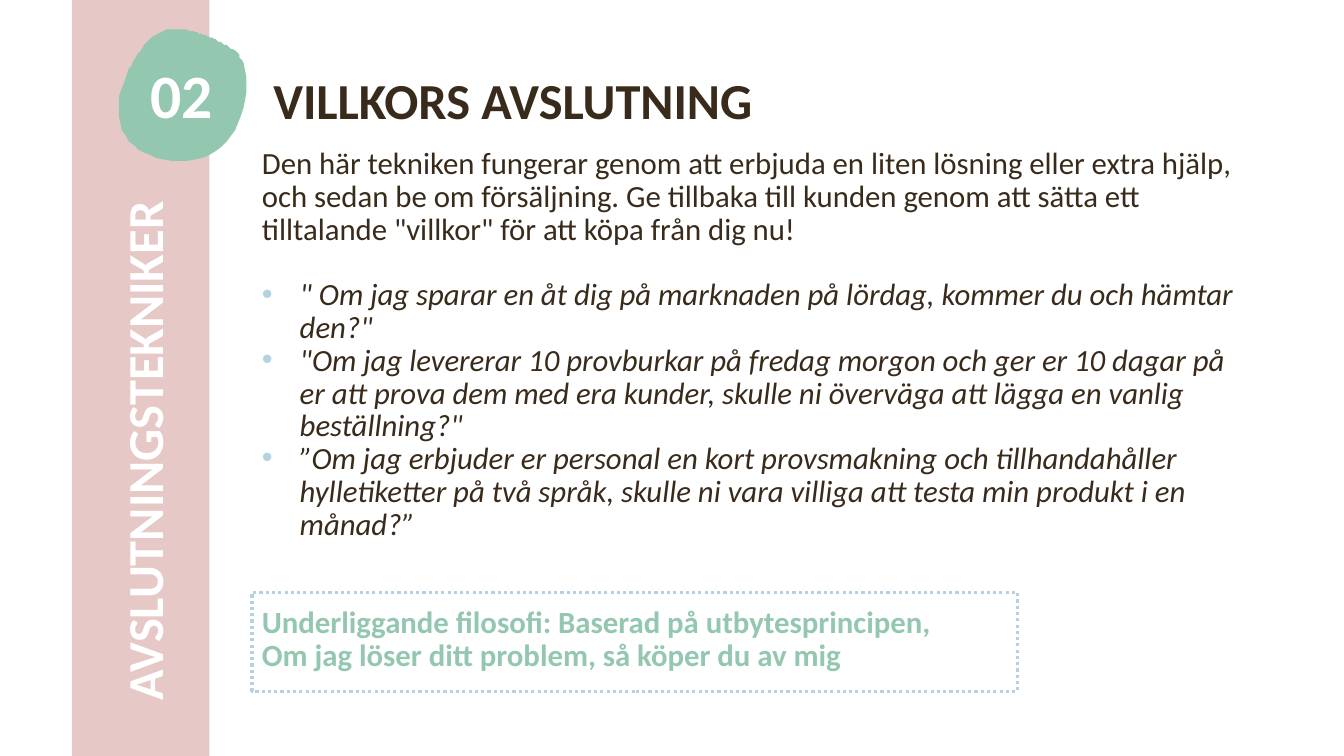
from dataclasses import dataclass
from typing import Any

from lxml import etree
from pptx import Presentation
from pptx import util as u
from pptx.dml.color import RGBColor
from pptx.enum import dml, shapes, text
from pptx.oxml.ns import qn

Pt = u.Pt
BROWN = RGBColor(0x38, 0x2B, 0x1B)
GREEN = RGBColor(0x94, 0xC7, 0xB0)
PINK = RGBColor(0xE6, 0xC8, 0xC7)
BLUE = RGBColor(0xB6, 0xD1, 0xE1)
WHITE = RGBColor(0xFF, 0xFF, 0xFF)
LINE = Pt(23.4)
INDENT = 27


@dataclass
class Para:
    words: str
    size: float = 22
    color: RGBColor = BROWN
    bold: bool = False
    italic: bool = False
    bullet: bool = False
    before: float = 0
    spacing: Any = LINE
    align: Any = text.PP_ALIGN.LEFT


@dataclass
class Box:
    left: float
    top: float
    width: float
    height: float
    paras: tuple[Para, ...]
    rotation: float = 0
    anchor: Any = text.MSO_ANCHOR.TOP


def add_bullet(p: Any) -> None:
    pPr = p._p.get_or_add_pPr()
    pPr.set("marL", str(Pt(INDENT)))
    pPr.set("indent", str(-Pt(INDENT)))
    clr = etree.SubElement(pPr, qn("a:buClr"))
    etree.SubElement(clr, qn("a:srgbClr"), val=str(BLUE))
    etree.SubElement(pPr, qn("a:buFont"), typeface="Arial")
    etree.SubElement(pPr, qn("a:buChar"), char="•")


def fill_box(sp: Any, box: Box) -> None:
    sp.left, sp.top = Pt(box.left), Pt(box.top)
    sp.width, sp.height = Pt(box.width), Pt(box.height)
    sp.rotation = box.rotation
    tf = sp.text_frame
    tf.word_wrap = True
    tf.auto_size = text.MSO_AUTO_SIZE.NONE
    tf.vertical_anchor = box.anchor
    for i, para in enumerate(box.paras):
        p = tf.add_paragraph() if i else tf.paragraphs[0]
        if para.bullet:
            add_bullet(p)
        p.alignment = para.align
        p.line_spacing = para.spacing
        if para.before:
            p.space_before = Pt(para.before)
        r = p.add_run()
        r.text = para.words
        formats = {"name": "Calibri", "size": Pt(para.size),
                   "bold": para.bold, "italic": para.italic}
        for name, value in formats.items():
            setattr(r.font, name, value)
        r.font.color.rgb = para.color


def add_rect(s: Any, left: float, top: float, width: float, height: float) -> Any:
    sp = s.shapes.add_shape(shapes.MSO_SHAPE.RECTANGLE, Pt(left), Pt(top),
                            Pt(width), Pt(height))
    sp.shadow.inherit = False
    return sp


def add_blob(s: Any, start: tuple, curves: list[tuple], steps: int = 16) -> None:
    """Trace cubic curves, given in points, as a smooth closed outline."""
    points, a = [], start
    for b, c, d in curves:
        for k in range(1, steps + 1):
            t = k / steps
            points.append(tuple(
                (1 - t) ** 3 * a[n] + 3 * (1 - t) ** 2 * t * b[n]
                + 3 * (1 - t) * t ** 2 * c[n] + t ** 3 * d[n] for n in (0, 1)))
        a = d
    builder = s.shapes.build_freeform(*start, scale=Pt(1))
    builder.add_line_segments(points, close=True)
    sp = builder.convert_to_shape()
    sp.shadow.inherit = False
    sp.fill.solid()
    sp.fill.fore_color.rgb = GREEN
    sp.line.fill.background()


TITLE = Box(188, 45.4, 626, 57, (
    Para("VILLKORS AVSLUTNING", 36, bold=True, spacing=0.9),),
    anchor=text.MSO_ANCHOR.MIDDLE)

QUOTES = (
    '" Om jag sparar en åt dig på marknaden på lördag, kommer du och hämtar den?"',
    '"Om jag levererar 10 provburkar på fredag morgon och ger er 10 dagar på er att '
    'prova dem med era kunder, skulle ni överväga att lägga en vanlig beställning?"',
    "”Om jag erbjuder er personal en kort provsmakning och tillhandahåller "
    "hylletiketter på två språk, skulle ni vara villiga att testa min produkt i en "
    "månad?”",
)
BODY = Box(180, 102.2, 722, 407, (
    Para("Den här tekniken fungerar genom att erbjuda en liten lösning eller extra "
         "hjälp, och sedan be om försäljning. Ge tillbaka till kunden genom att sätta "
         'ett tilltalande "villkor" för att köpa från dig nu!'),
    *(Para(quote, italic=True, bullet=True, before=0 if i else 23.4)
      for i, quote in enumerate(QUOTES)),
    Para("Underliggande filosofi: Baserad på utbytesprincipen,", color=GREEN,
         bold=True, before=46.8),
    Para("Om jag löser ditt problem, så köper du av mig", color=GREEN, bold=True),
))
SIDE_LABEL = Box(-141.8, 199.4, 531.4, 84.2, (
    Para("AVSLUTNINGSTEKNIKER", 36, WHITE, bold=True, spacing=0.9),), rotation=270)
NUMBER = Box(84.2, 66.2, 90.7, 75.6, (
    Para("02", 44, WHITE, bold=True, align=text.PP_ALIGN.CENTER),))

BLOB_START = (139.7, 23)
BLOB_CURVES = [
    ((127.4, 19.4), (115.2, 18.7), (105.1, 30.2)),
    ((95.8, 40.3), (87.1, 57.6), (85, 71.3)),
    ((80.6, 104.4), (109.4, 118.8), (139, 113.8)),
    ((167.8, 109.4), (182.2, 72), (173.5, 44.6)),
    ((170.6, 36.7), (163.4, 33.1), (156.2, 29.5)),
    ((151.2, 26.6), (145.4, 24.5), BLOB_START),
]


def main() -> None:
    prs = Presentation()
    prs.slide_width, prs.slide_height = Pt(960), Pt(540)
    s = prs.slides.add_slide(prs.slide_layouts[5])

    # Title and body
    fill_box(s.shapes.title, TITLE)
    fill_box(s.shapes.add_textbox(0, 0, 0, 0), BODY)

    # Side band with its label
    band = add_rect(s, 51.3, 0, 98.3, 540)
    band.fill.solid()
    band.fill.fore_color.rgb = PINK
    band.line.fill.background()
    fill_box(s.shapes.add_textbox(0, 0, 0, 0), SIDE_LABEL)

    # Dotted frame round the philosophy
    frame = add_rect(s, 180, 423.2, 546.8, 70.6)
    frame.fill.background()
    frame.line.color.rgb = BLUE
    frame.line.width = Pt(2.25)
    frame.line.dash_style = dml.MSO_LINE.ROUND_DOT

    # Number badge
    add_blob(s, BLOB_START, BLOB_CURVES)
    fill_box(s.shapes.add_textbox(0, 0, 0, 0), NUMBER)

    prs.save("out.pptx")


if __name__ == "__main__":
    main()
